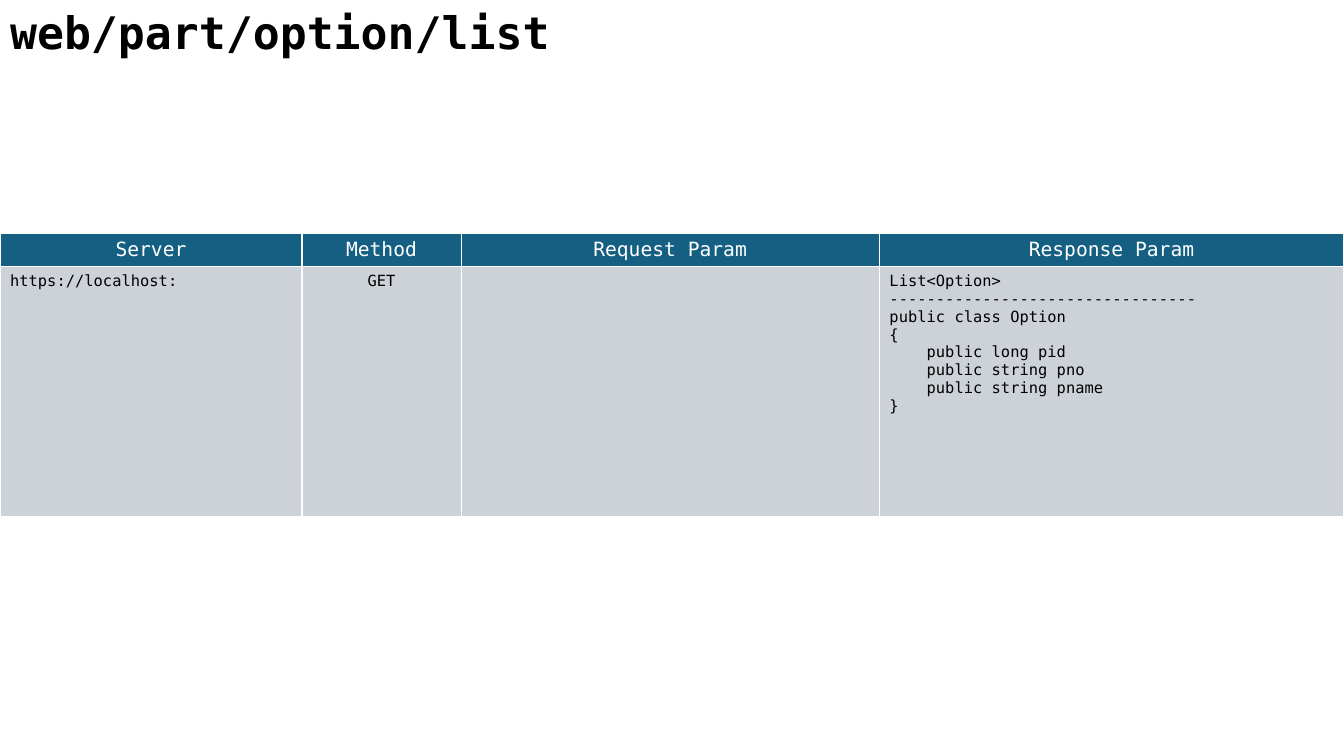
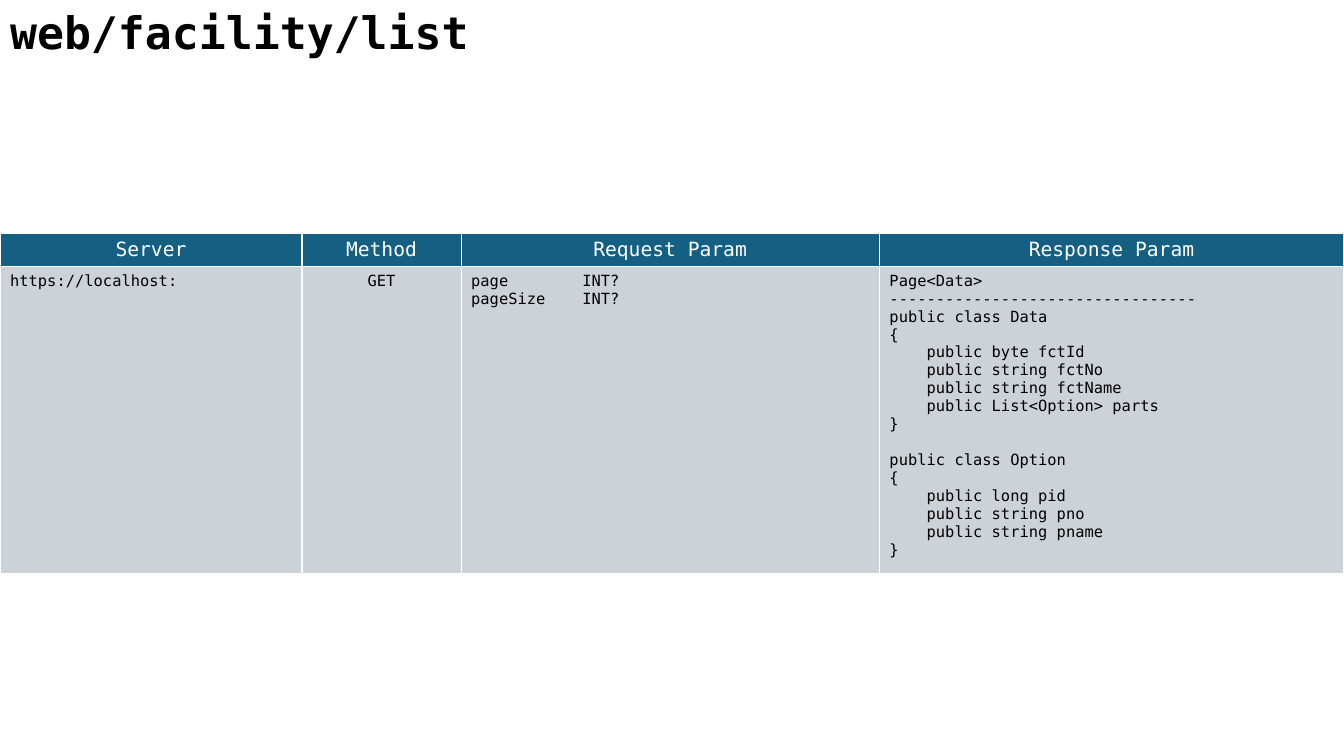
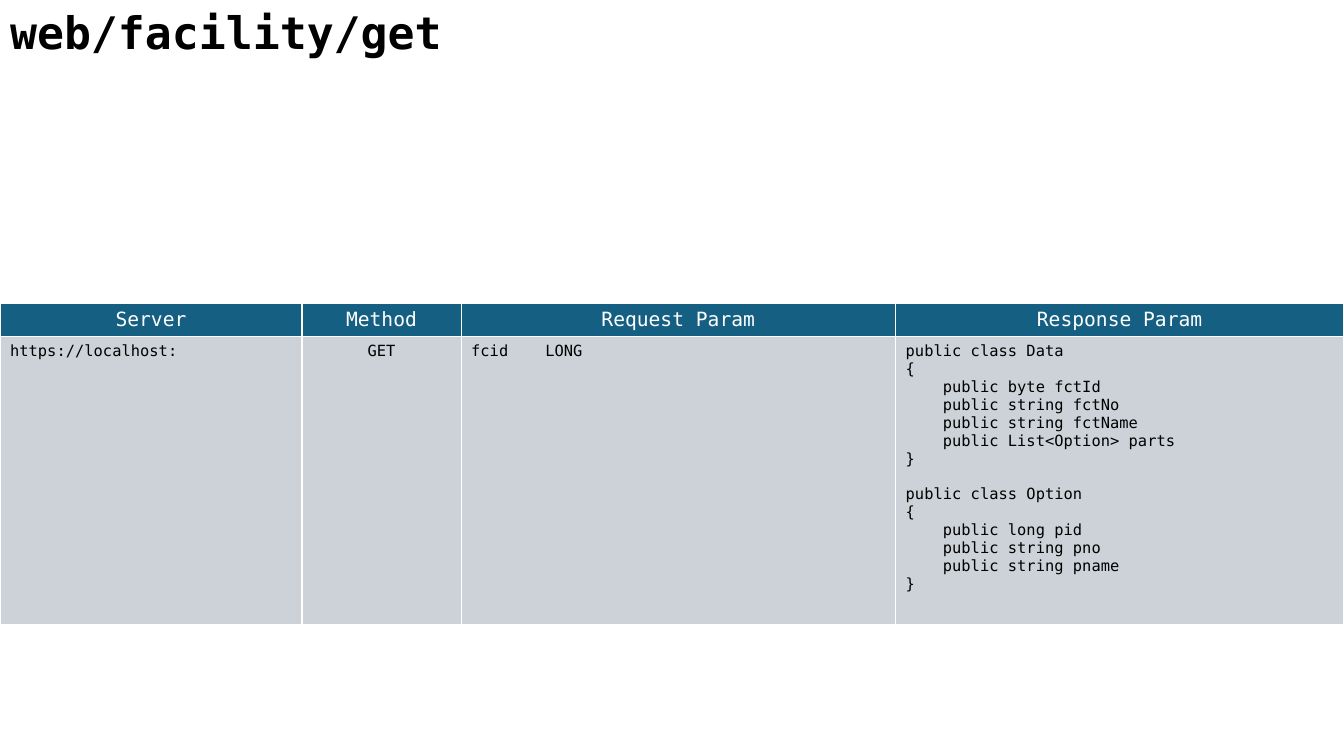
from lxml import etree
from pptx import Presentation
from pptx.dml.color import RGBColor
from pptx.enum.text import MSO_ANCHOR, MSO_AUTO_SIZE, PP_ALIGN
from pptx.oxml.ns import qn
from pptx.util import Pt

LEFT, CENTER = PP_ALIGN.LEFT, PP_ALIGN.CENTER
TOP, GROW = MSO_ANCHOR.TOP, MSO_AUTO_SIZE.SHAPE_TO_FIT_TEXT

THEME = {
    "font": "DejaVu Sans Mono",
    "header_fill": "156082",
    "body_fill": "CCD2D8",
    "border": "FFFFFF",
    "border_width": 1,
    "title": {"size": 32, "bold": True, "color": "000000"},
    "header": {"size": 14, "bold": False, "color": "FFFFFF"},
    "body": {"size": 11, "bold": False, "color": "000000"},
}
SLIDE_W, SLIDE_H = 960, 540
TITLE_BOX = (0, 0, 680.4, 46)
HEADER_H = 23.5
SERVER_W, METHOD_W = 215.8, 113.6
CODE_LINE = 12.8
CHAR_W = 6.62

HEADERS = ["Server", "Method", "Request Param", "Response Param"]
RULE = "---------------------------------"
OPTION = [
    "public class Option",
    "{",
    "    public long pid",
    "    public string pno",
    "    public string pname",
    "}",
]
DATA = [
    "public class Data",
    "{",
    "    public byte fctId",
    "    public string fctNo",
    "    public string fctName",
    "    public List<Option> parts",
    "}",
]
ENDPOINTS = [
    {"title": "web/part/option/list", "top": 166.5, "body_h": 178.6,
     "request_w": 298.8, "params": [], "tab_chars": 0,
     "response": [["List<Option>", RULE] + OPTION]},
    {"title": "web/facility/list", "top": 166.5, "body_h": 219,
     "request_w": 298.8, "params": ["page\tINT?", "pageSize\tINT?"], "tab_chars": 12,
     "response": [["Page<Data>", RULE] + DATA, OPTION]},
    {"title": "web/facility/get", "top": 216.6, "body_h": 205.4,
     "request_w": 310.4, "params": ["fcid\tLONG"], "tab_chars": 8,
     "response": [DATA, OPTION]},
]


def set_attrs(obj, **values):
    for name, value in values.items():
        setattr(obj, name, value)


def style_font(font, style):
    fmt = THEME[style]
    set_attrs(font, name=THEME["font"], size=Pt(fmt["size"]), bold=fmt["bold"])
    font.color.rgb = RGBColor.from_string(fmt["color"])


def write_blocks(tf, blocks, style, align=LEFT, tab=0):
    p = None
    for b, block in enumerate(blocks):
        for i, line in enumerate(block):
            p = tf.paragraphs[0] if p is None else tf.add_paragraph()
            p.alignment = align
            p.space_before = Pt(CODE_LINE if b and not i else 0)
            if tab:
                tabs = etree.SubElement(p._p.get_or_add_pPr(), qn("a:tabLst"))
                etree.SubElement(tabs, qn("a:tab"), pos=str(Pt(tab)), algn="l")
            r = p.add_run()
            r.text = line
            style_font(r.font, style)
    if p is None:
        style_font(tf.paragraphs[0].font, style)


def format_cell(cell, fill):
    tc_pr = cell._tc.get_or_add_tcPr()
    for side in ("lnL", "lnR", "lnT", "lnB"):
        ln = etree.SubElement(tc_pr, qn("a:" + side), w=str(Pt(THEME["border_width"])))
        solid = etree.SubElement(ln, qn("a:solidFill"))
        etree.SubElement(solid, qn("a:srgbClr"), val=THEME["border"])
    cell.fill.solid()
    cell.fill.fore_color.rgb = RGBColor.from_string(fill)
    set_attrs(cell, margin_left=Pt(7.2), margin_right=Pt(7.2),
              margin_top=Pt(3.6), margin_bottom=Pt(3.6), vertical_anchor=TOP)


def add_title(s, text):
    sp = s.shapes.title
    left, top, width, height = map(Pt, TITLE_BOX)
    set_attrs(sp, left=left, top=top, width=width, height=height)
    tf = sp.text_frame
    set_attrs(tf, word_wrap=True, auto_size=GROW, vertical_anchor=TOP)
    write_blocks(tf, [[text]], "title")


def add_endpoint_table(s, endpoint):
    widths = [SERVER_W, METHOD_W, endpoint["request_w"]]
    widths.append(SLIDE_W - sum(widths))
    heights = [HEADER_H, endpoint["body_h"]]
    table = s.shapes.add_table(2, len(HEADERS), 0, Pt(endpoint["top"]),
                               Pt(SLIDE_W), Pt(sum(heights))).table
    set_attrs(table, first_row=True, horz_banding=False)
    for column, width in zip(table.columns, widths):
        column.width = Pt(width)
    for row, height in zip(table.rows, heights):
        row.height = Pt(height)
    body = [
        ([["https://localhost:"]], LEFT, 0),
        ([["GET"]], CENTER, 0),
        ([endpoint["params"]], LEFT, endpoint["tab_chars"] * CHAR_W),
        (endpoint["response"], LEFT, 0),
    ]
    for c, (header, (blocks, align, tab)) in enumerate(zip(HEADERS, body)):
        head_cell, body_cell = table.cell(0, c), table.cell(1, c)
        format_cell(head_cell, THEME["header_fill"])
        format_cell(body_cell, THEME["body_fill"])
        write_blocks(head_cell.text_frame, [[header]], "header", CENTER)
        write_blocks(body_cell.text_frame, blocks, "body", align, tab)


def main():
    prs = Presentation()
    set_attrs(prs, slide_width=Pt(SLIDE_W), slide_height=Pt(SLIDE_H))
    for endpoint in ENDPOINTS:
        s = prs.slides.add_slide(prs.slide_layouts[5])
        add_title(s, endpoint["title"])
        add_endpoint_table(s, endpoint)
    prs.save("out.pptx")


if __name__ == "__main__":
    main()
